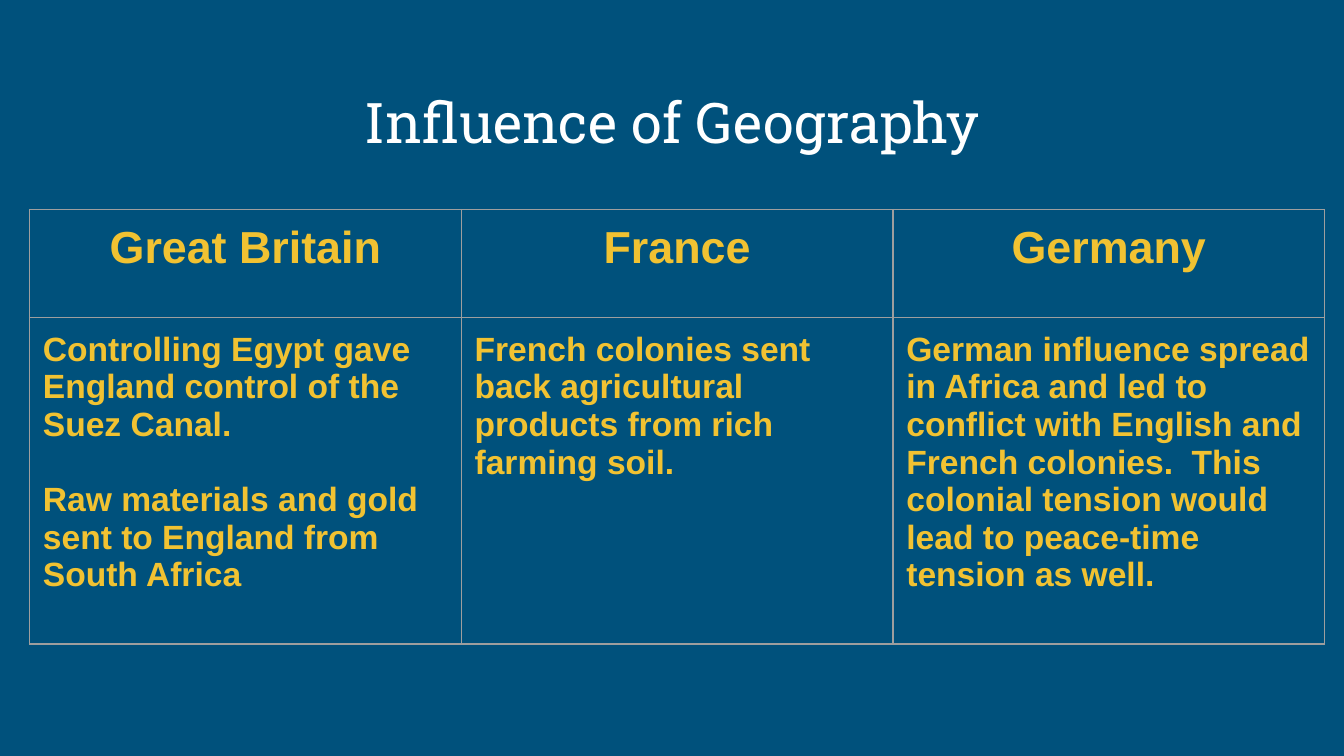
from lxml import etree
from pptx import Presentation
from pptx.dml.color import RGBColor
from pptx.enum.text import MSO_ANCHOR, PP_ALIGN
from pptx.oxml.ns import qn
from pptx.util import Pt

CENTER, LEFT = PP_ALIGN.CENTER, PP_ALIGN.LEFT
BOTTOM, TOP = MSO_ANCHOR.BOTTOM, MSO_ANCHOR.TOP

# Content: country and its paragraphs
TITLE = "Influence of Geography"
COUNTRIES = [
    ("Great Britain", ["Controlling Egypt gave England control of the Suez Canal.",
                       "Raw materials and gold sent to England from South Africa"]),
    ("France", ["French colonies sent back agricultural products from rich farming soil."]),
    ("Germany", ["German influence spread in Africa and led to conflict with English and "
                 "French colonies.  This colonial tension would lead to peace-time "
                 "tension as well."]),
]

BLUE, WHITE, GOLD, GRAY = "00517C", "FFFFFF", "F1C232", "9E9E9E"
INSET = Pt(7.2)
COLUMN_WIDTH = 231.3
ROW_HEIGHTS = [57.8, 175]
PARAGRAPH_GAP = 20.1


def color(value):
    return RGBColor.from_string(value)


def write(frame, lines, font, size, ink, align, bold=False):
    frame.text = "\n".join(lines)
    frame.word_wrap = True
    for index, para in enumerate(frame.paragraphs):
        para.alignment = align
        para.space_before = Pt(PARAGRAPH_GAP if index else 0)
        for span in para.runs:
            span.font.name = font
            span.font.size = Pt(size)
            span.font.bold = bold
            span.font.color.rgb = color(ink)


def set_insets(target, anchor):
    target.margin_left = target.margin_right = INSET
    target.margin_top = target.margin_bottom = INSET
    target.vertical_anchor = anchor


def add_borders(cell, ink, width):
    properties = cell._tc.get_or_add_tcPr()
    for index, side in enumerate(("lnL", "lnR", "lnT", "lnB")):
        line = etree.Element(qn("a:" + side), w=str(Pt(width)))
        fill = etree.SubElement(line, qn("a:solidFill"))
        etree.SubElement(fill, qn("a:srgbClr"), val=ink)
        properties.insert(index, line)


deck = Presentation()
deck.slide_width, deck.slide_height = Pt(720), Pt(405)
page = deck.slides.add_slide(deck.slide_layouts[6])
page.background.fill.solid()
page.background.fill.fore_color.rgb = color(BLUE)

# Title
box = page.shapes.add_textbox(Pt(30.5), Pt(36), Pt(659), Pt(54))
set_insets(box.text_frame, BOTTOM)
write(box.text_frame, [TITLE], "Roboto Slab", 30, WHITE, CENTER)

# Table: one column per country
table = page.shapes.add_table(
    len(ROW_HEIGHTS), len(COUNTRIES), Pt(15.8), Pt(112.2),
    Pt(COLUMN_WIDTH * len(COUNTRIES)), Pt(sum(ROW_HEIGHTS))).table
table.first_row = table.horz_banding = False
for row, height in zip(table.rows, ROW_HEIGHTS):
    row.height = Pt(height)

for column, (country, influences) in enumerate(COUNTRIES):
    table.columns[column].width = Pt(COLUMN_WIDTH)
    rows = [([country], 24, CENTER), (influences, 18, LEFT)]
    for row, (lines, size, align) in enumerate(rows):
        cell = table.cell(row, column)
        cell.fill.background()
        add_borders(cell, GRAY, 0.75)
        set_insets(cell, TOP)
        write(cell.text_frame, lines, "Arial", size, GOLD, align, bold=True)

deck.save("out.pptx")
